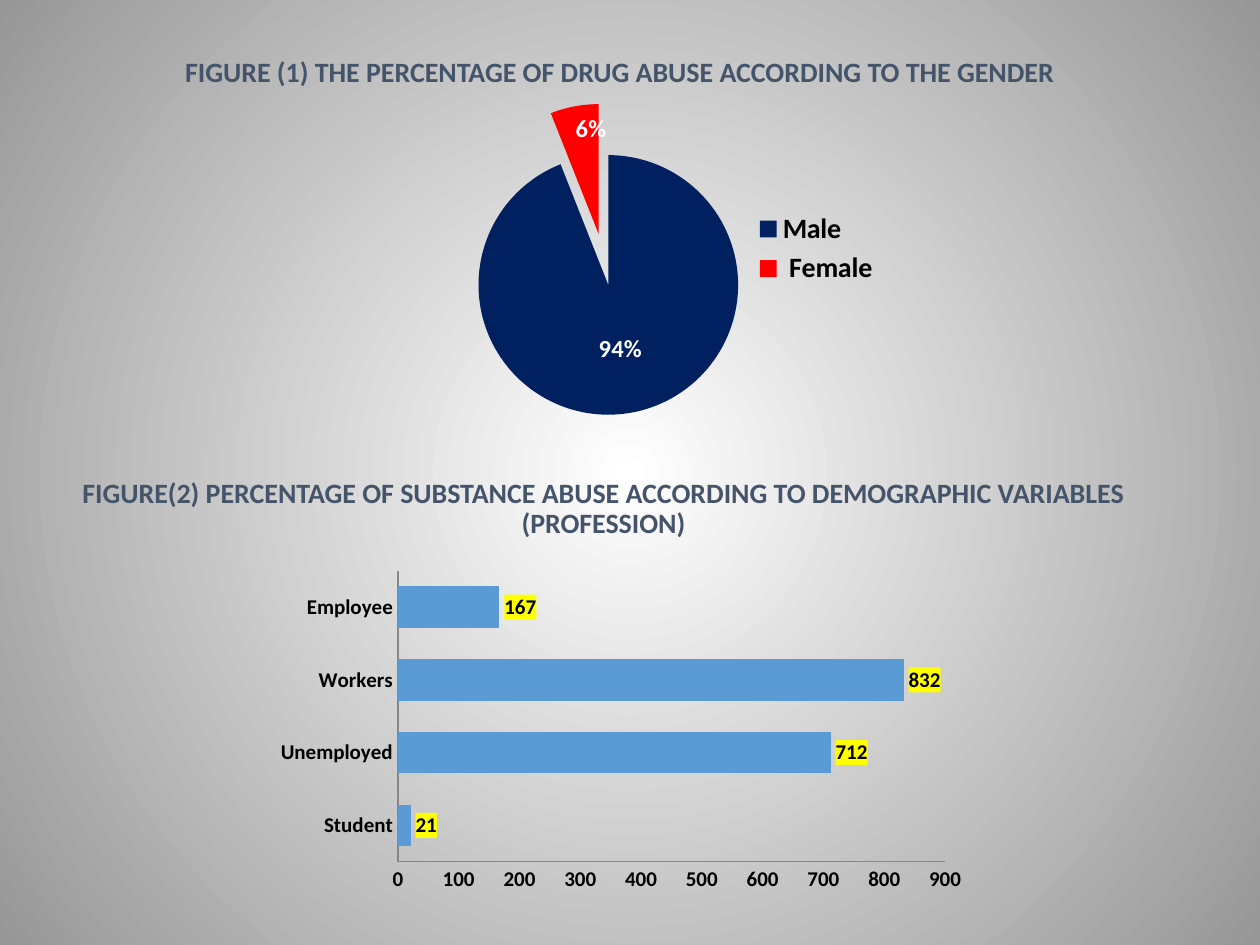
from lxml.etree import SubElement
from pptx import Presentation
from pptx.chart.data import CategoryChartData
from pptx.dml.color import RGBColor
from pptx.enum.chart import XL_CHART_TYPE, XL_LABEL_POSITION, XL_LEGEND_POSITION, XL_TICK_MARK
from pptx.enum.text import MSO_ANCHOR, MSO_AUTO_SIZE, PP_ALIGN
from pptx.oxml import parse_xml
from pptx.oxml.ns import nsdecls, qn
from pptx.util import Inches, Pt


def color(value):
    return RGBColor.from_string(value)


class SlideBuilder:
    font_name = "Calibri"
    heading_color = "44546A"
    text_color = "000000"
    axis_color = "878787"

    def __init__(self, slide):
        self.slide = slide

    def background(self, center, edge):
        fill = self.slide.background.fill
        fill.gradient()
        for stop, value, position in zip(fill.gradient_stops, (center, edge), (0, 1)):
            stop.color.rgb = color(value)
            stop.position = position
        gradient = self.slide.background._cSld.find(".//" + qn("a:gradFill"))
        gradient.remove(gradient.find(qn("a:lin")))
        gradient.append(parse_xml(
            f'<a:path {nsdecls("a")} path="circle">'
            '<a:fillToRect l="50000" t="50000" r="50000" b="50000"/></a:path>'))

    def set_font(self, font, size, value, bold=True):
        font.name = self.font_name
        font.size = Pt(size)
        font.bold = bold
        font.color.rgb = color(value)

    def heading(self, shape, text, left, top, width, height):
        shape.left, shape.top = Inches(left), Inches(top)
        shape.width, shape.height = Inches(width), Inches(height)
        frame = shape.text_frame
        frame.text = text
        frame.word_wrap = True
        frame.auto_size = MSO_AUTO_SIZE.NONE
        frame.vertical_anchor = MSO_ANCHOR.BOTTOM
        paragraph = frame.paragraphs[0]
        paragraph.alignment = PP_ALIGN.CENTER
        paragraph.line_spacing = 0.9
        self.set_font(paragraph.font, 16, self.heading_color)

    def title(self, text, *box):
        self.heading(self.slide.shapes.title, text, *box)

    def text(self, text, *box):
        shape = self.slide.shapes.add_textbox(*map(Inches, box))
        self.heading(shape, text, *box)

    def chart(self, kind, values, box, plot_box, size, bold):
        data = CategoryChartData()
        data.categories = values.keys()
        data.add_series("Series 1", values.values())
        chart = self.slide.shapes.add_chart(kind, *map(Inches, box), data).chart
        chart.has_title = False
        chart.has_legend = False
        self.set_font(chart.font, size, self.text_color, bold)
        plot_area = chart._chartSpace.chart.plotArea
        for layout in plot_area.findall(qn("c:layout")):
            plot_area.remove(layout)
        layout = parse_xml(f'<c:layout {nsdecls("c")}><c:manualLayout/></c:layout>')
        settings = zip(("layoutTarget", "xMode", "yMode", "x", "y", "w", "h"),
                       ("inner", "edge", "edge", *plot_box))
        for name, value in settings:
            SubElement(layout[0], qn(f"c:{name}")).set("val", str(value))
        plot_area.insert(0, layout)
        return chart

    def pie(self, values, colors, label_positions, box, plot_box):
        chart = self.chart(XL_CHART_TYPE.PIE, values, box, plot_box, 10, False)
        chart.has_legend = True
        chart.legend.position = XL_LEGEND_POSITION.RIGHT
        chart.legend.include_in_layout = False
        self.set_font(chart.legend.font, 16, self.text_color)
        series = chart.plots[0].series[0]
        labels = series.data_labels
        labels.show_value = False
        labels.show_percentage = True
        labels.number_format = "0%"
        labels.number_format_is_linked = False
        self.set_font(labels.font, 14, "FFFFFF")
        for index, (value, position) in enumerate(zip(colors, label_positions)):
            point = series.points[index]
            point.format.fill.solid()
            point.format.fill.fore_color.rgb = color(value)
            self.set_font(point.data_label.font, 14, "FFFFFF")
            point.data_label.position = position
        for label in labels._element.findall(qn("c:dLbl")):
            label.find(qn("c:showVal")).set("val", "0")
            label.find(qn("c:showPercent")).set("val", "1")
        explosion = parse_xml(f'<c:explosion {nsdecls("c")} val="20"/>')
        series._element.find(qn("c:dPt")).addprevious(explosion)

    def bars(self, values, fill, label_fill, box, plot_box):
        chart = self.chart(XL_CHART_TYPE.BAR_CLUSTERED, values, box, plot_box, 12, True)
        for axis in (chart.category_axis, chart.value_axis):
            axis.has_major_gridlines = False
            axis.major_tick_mark = XL_TICK_MARK.NONE
            axis.minor_tick_mark = XL_TICK_MARK.NONE
            axis.format.line.color.rgb = color(self.axis_color)
        chart.value_axis.minimum_scale = 0
        chart.value_axis.maximum_scale = 900
        chart.value_axis.major_unit = 100
        plot = chart.plots[0]
        plot.gap_width = 75
        plot.vary_by_categories = False
        series = plot.series[0]
        series.format.fill.solid()
        series.format.fill.fore_color.rgb = color(fill)
        labels = series.data_labels
        labels.show_value = True
        labels.position = XL_LABEL_POSITION.OUTSIDE_END
        self.set_font(labels.font, 12, self.text_color)
        labels._element.find(qn("c:txPr")).addprevious(parse_xml(
            f'<c:spPr {nsdecls("c", "a")}><a:solidFill>'
            f'<a:srgbClr val="{label_fill}"/></a:solidFill></c:spPr>'))


def main():
    presentation = Presentation()
    presentation.slide_width = Inches(10)
    presentation.slide_height = Inches(7.5)
    builder = SlideBuilder(presentation.slides.add_slide(presentation.slide_layouts[5]))
    builder.background("FFFFFF", "979797")
    builder.title("FIGURE (1) THE PERCENTAGE OF DRUG ABUSE ACCORDING TO THE GENDER",
                  0.92, 0.08, 8, 0.67)
    builder.pie({"Male": 94, " Female": 6}, ("002060", "FF0000"),
                (XL_LABEL_POSITION.CENTER, XL_LABEL_POSITION.INSIDE_END),
                (2.5, 0.56, 4.58, 2.83), (0.23, 0.09, 0.54, 0.88))
    builder.bars({"Student": 21, "Unemployed": 712, "Workers": 832, "Employee": 167},
                 "5B9BD5", "FFFF00", (2, 3.92, 5.79, 3.21), (0.2, 0.19, 0.75, 0.72))
    builder.text("FIGURE(2) PERCENTAGE OF SUBSTANCE ABUSE ACCORDING TO "
                 "DEMOGRAPHIC VARIABLES (PROFESSION)", 0.33, 3.75, 8.92, 0.58)
    presentation.save("out.pptx")


if __name__ == "__main__":
    main()
